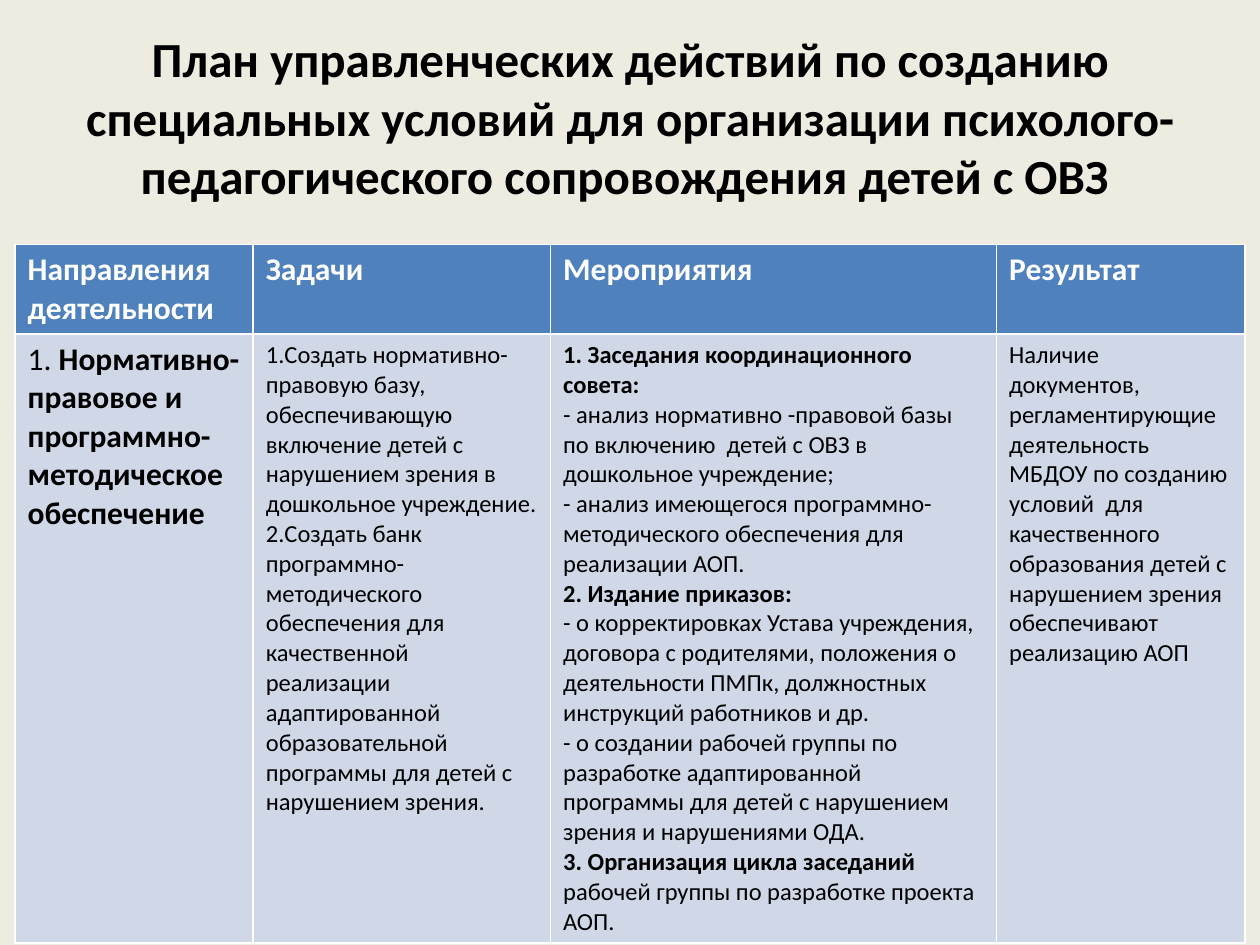
from dataclasses import dataclass

from pptx import Presentation
from pptx.dml.color import RGBColor
from pptx.enum.text import MSO_ANCHOR, PP_ALIGN
from pptx.util import Inches, Pt


@dataclass(frozen=True)
class Theme:
    font: str = "Calibri"
    background: str = "EEECE1"
    header: str = "4F81BD"
    body: str = "D0D8E8"
    dark: str = "000000"
    light: str = "FFFFFF"
    title_size: int = 28
    head_size: int = 18
    text_size: int = 14


THEME = Theme()

# Content: a cell is a list of paragraphs, a paragraph a list of (text, bold) runs
TITLE = ("План управленческих действий по созданию специальных условий для "
         "организации психолого-педагогического сопровождения детей с ОВЗ ")
HEADERS = ["Направления деятельности", "Задачи", "Мероприятия", "Результат"]
DIRECTION = [
    [("1.", False),
     (" Нормативно-правовое и программно-методическое обеспечение", True)],
]
TASKS = [
    [("1.Создать нормативно-правовую базу, обеспечивающую включение детей с "
      "нарушением зрения в дошкольное учреждение.", False)],
    [("2.Создать банк программно-методического обеспечения для качественной "
      "реализации адаптированной образовательной программы для детей с "
      "нарушением зрения.", False)],
]
ACTIVITIES = [
    [("1. Заседания координационного совета:", True)],
    [("- анализ нормативно -правовой базы по включению  детей с ОВЗ в "
      "дошкольное учреждение;", False)],
    [("- анализ имеющегося программно-методического обеспечения для "
      "реализации АОП.", False)],
    [("2. Издание приказов:", True)],
    [("- о корректировках Устава учреждения,  договора с родителями, положения "
      "о деятельности ПМПк, должностных инструкций работников и др.", False)],
    [("- о создании рабочей группы по разработке адаптированной программы для "
      "детей с нарушением зрения и нарушениями ОДА.", False)],
    [("3. Организация цикла заседаний ", True),
     ("рабочей группы по разработке проекта АОП.", False)],
]
RESULT = [
    [("Наличие документов, регламентирующие деятельность МБДОУ по созданию "
      "условий  для качественного образования детей с нарушением зрения "
      "обеспечивают реализацию АОП", False)],
]

# Grid, in inches
COLUMNS = [1.89, 2.36, 3.54, 1.97]
ROWS = [0.7, 4.77]
TABLE_TOP = 1.94


def write(tf, paragraphs, size, color=THEME.dark, align=None):
    for i, runs in enumerate(paragraphs):
        p = tf.paragraphs[0] if i == 0 else tf.add_paragraph()
        p.alignment = align
        for text, bold in runs:
            r = p.add_run()
            r.text = text
            r.font.name = THEME.font
            r.font.size = Pt(size)
            r.font.bold = bold
            r.font.color.rgb = RGBColor.from_string(color)


def paint(fill, color):
    fill.solid()
    fill.fore_color.rgb = RGBColor.from_string(color)


def main():
    prs = Presentation()
    prs.slide_width, prs.slide_height = Inches(10), Inches(7.5)
    s = prs.slides.add_slide(prs.slide_layouts[5])
    paint(s.background.fill, THEME.background)

    # Title
    title = s.shapes.title
    title.left, title.top = Inches(0.5), Inches(0.3)
    title.width, title.height = Inches(9), Inches(1.25)
    title.text_frame.vertical_anchor = MSO_ANCHOR.MIDDLE
    write(title.text_frame, [[(TITLE, True)]], THEME.title_size,
          align=PP_ALIGN.CENTER)

    # Table, centred; the default table style draws its white rules
    width = sum(COLUMNS)
    table = s.shapes.add_table(
        len(ROWS), len(COLUMNS), (prs.slide_width - Inches(width)) // 2,
        Inches(TABLE_TOP), Inches(width), Inches(sum(ROWS))).table
    for column, w in zip(table.columns, COLUMNS):
        column.width = Inches(w)
    for row, h in zip(table.rows, ROWS):
        row.height = Inches(h)

    # Cells
    body = [DIRECTION, TASKS, ACTIVITIES, RESULT]
    for c, (header, paragraphs) in enumerate(zip(HEADERS, body)):
        head, cell = table.cell(0, c), table.cell(1, c)
        paint(head.fill, THEME.header)
        paint(cell.fill, THEME.body)
        write(head.text_frame, [[(header, True)]], THEME.head_size, THEME.light)
        write(cell.text_frame, paragraphs,
              THEME.head_size if c == 0 else THEME.text_size)

    prs.save("out.pptx")


if __name__ == "__main__":
    main()
